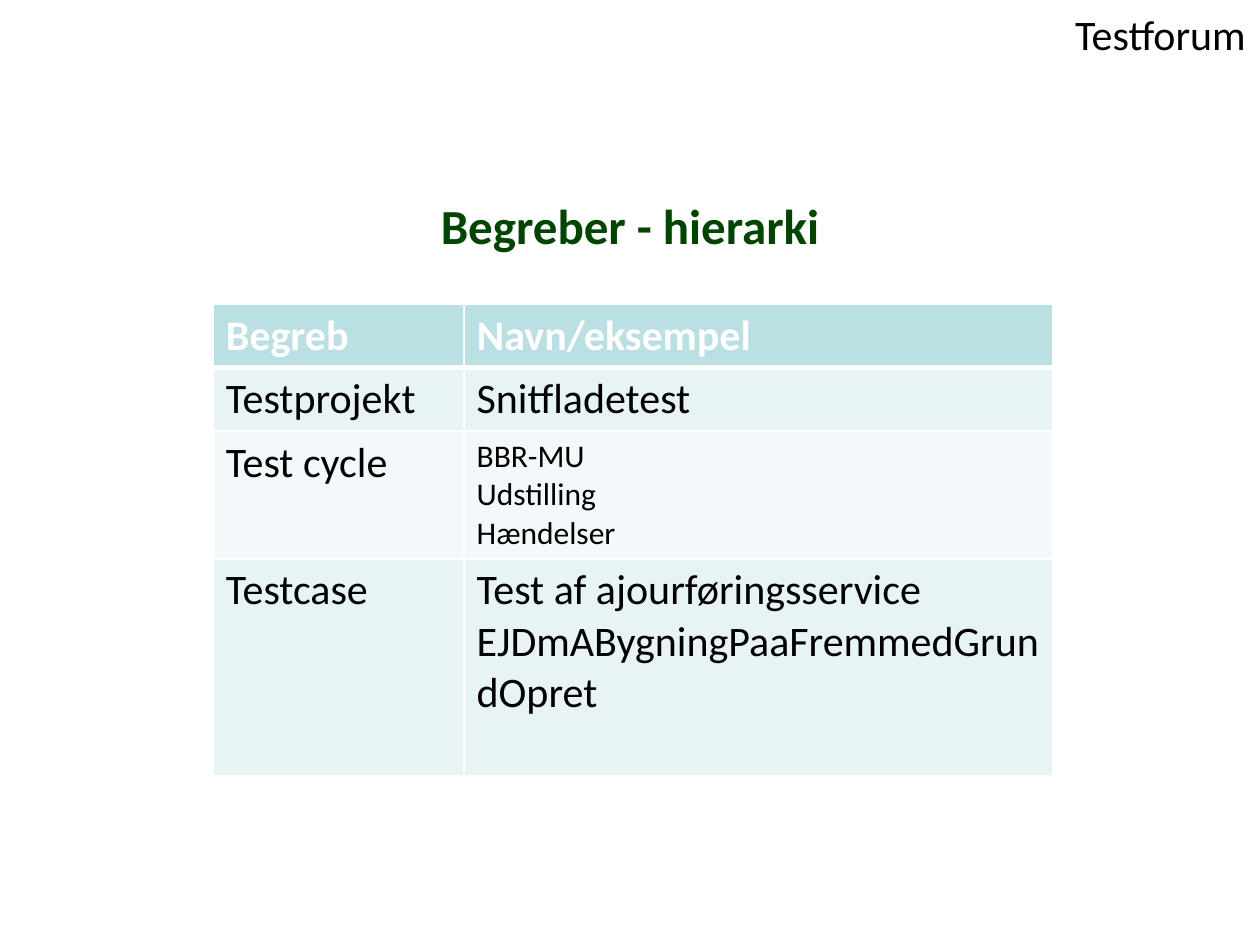
from lxml.etree import SubElement
from pptx import Presentation
from pptx.dml.color import RGBColor
from pptx.enum.text import MSO_ANCHOR, PP_ALIGN
from pptx.oxml.ns import qn
from pptx.util import Pt

WHITE = RGBColor(0xFF, 0xFF, 0xFF)
BLACK = RGBColor(0, 0, 0)
DARK_GREEN = RGBColor(0x00, 0x46, 0x00)
HEADER_FILL = RGBColor(0xBB, 0xE0, 0xE3)
BAND_FILLS = [RGBColor(0xE7, 0xF3, 0xF4), RGBColor(0xF3, 0xF9, 0xFA)]

FORUM = "Testforum"
TITLE = "Begreber - hierarki"
# Each row: concept, example, size of the example text
ROWS = [
    ("Begreb", "Navn/eksempel", 24),
    ("Testprojekt", "Snitfladetest", 24),
    ("Test cycle", "BBR-MU\vUdstilling\vHændelser", 18),
    ("Testcase", "Test af ajourføringsservice\nEJDmABygningPaaFremmedGrundOpret", 24),
]
COLUMN_WIDTHS = [143.3, 336.2]
ROW_HEIGHTS = [35.5, 36.5, 73, 124]
TABLE_LEFT, TABLE_TOP = 121.9, 173.8


def write(text_frame, text, size, color, bold=False, alignment=PP_ALIGN.LEFT):
    text_frame.text = text
    font_format = {"name": "Calibri", "size": Pt(size), "bold": bold}
    for paragraph in text_frame.paragraphs:
        paragraph.alignment = alignment
        for run in paragraph.runs:
            for attribute, value in font_format.items():
                setattr(run.font, attribute, value)
            run.font.color.rgb = color


def add_borders(cell, bottom_width):
    properties = cell._tc.get_or_add_tcPr()
    widths = {"a:lnL": 1, "a:lnR": 1, "a:lnT": 1, "a:lnB": bottom_width}
    for tag, width in widths.items():
        line = SubElement(properties, qn(tag), w=str(Pt(width)))
        fill = SubElement(line, qn("a:solidFill"))
        SubElement(fill, qn("a:srgbClr"), val=str(WHITE))


def add_concept_table(slide):
    frame = slide.shapes.add_table(
        len(ROWS), len(COLUMN_WIDTHS), Pt(TABLE_LEFT), Pt(TABLE_TOP),
        Pt(sum(COLUMN_WIDTHS)), Pt(sum(ROW_HEIGHTS)))
    table = frame.table
    for column, width in zip(table.columns, COLUMN_WIDTHS):
        column.width = Pt(width)
    for index, (concept, example, example_size) in enumerate(ROWS):
        table.rows[index].height = Pt(ROW_HEIGHTS[index])
        header = index == 0
        for column, (text, size) in enumerate([(concept, 24), (example, example_size)]):
            cell = table.cell(index, column)
            write(cell.text_frame, text, size, WHITE if header else BLACK, header)
            # Borders must precede the fill in the cell properties
            add_borders(cell, 3 if header else 1)
            cell.fill.solid()
            cell.fill.fore_color.rgb = HEADER_FILL if header else BAND_FILLS[(index - 1) % 2]


def main():
    presentation = Presentation()
    presentation.slide_width, presentation.slide_height = Pt(720), Pt(540)
    slide = presentation.slides.add_slide(presentation.slide_layouts[5])

    forum = slide.shapes.add_textbox(Pt(606.2), Pt(1.4), Pt(113.8), Pt(36))
    forum.text_frame.word_wrap = False
    write(forum.text_frame, FORUM, 24, BLACK, alignment=PP_ALIGN.CENTER)

    title = slide.shapes.title
    place = {"left": 36, "top": 105.8, "width": 648, "height": 45.4}
    for attribute, value in place.items():
        setattr(title, attribute, Pt(value))
    title.text_frame.vertical_anchor = MSO_ANCHOR.MIDDLE
    write(title.text_frame, TITLE, 28, DARK_GREEN, True, PP_ALIGN.CENTER)

    add_concept_table(slide)
    presentation.save("out.pptx")


if __name__ == "__main__":
    main()
